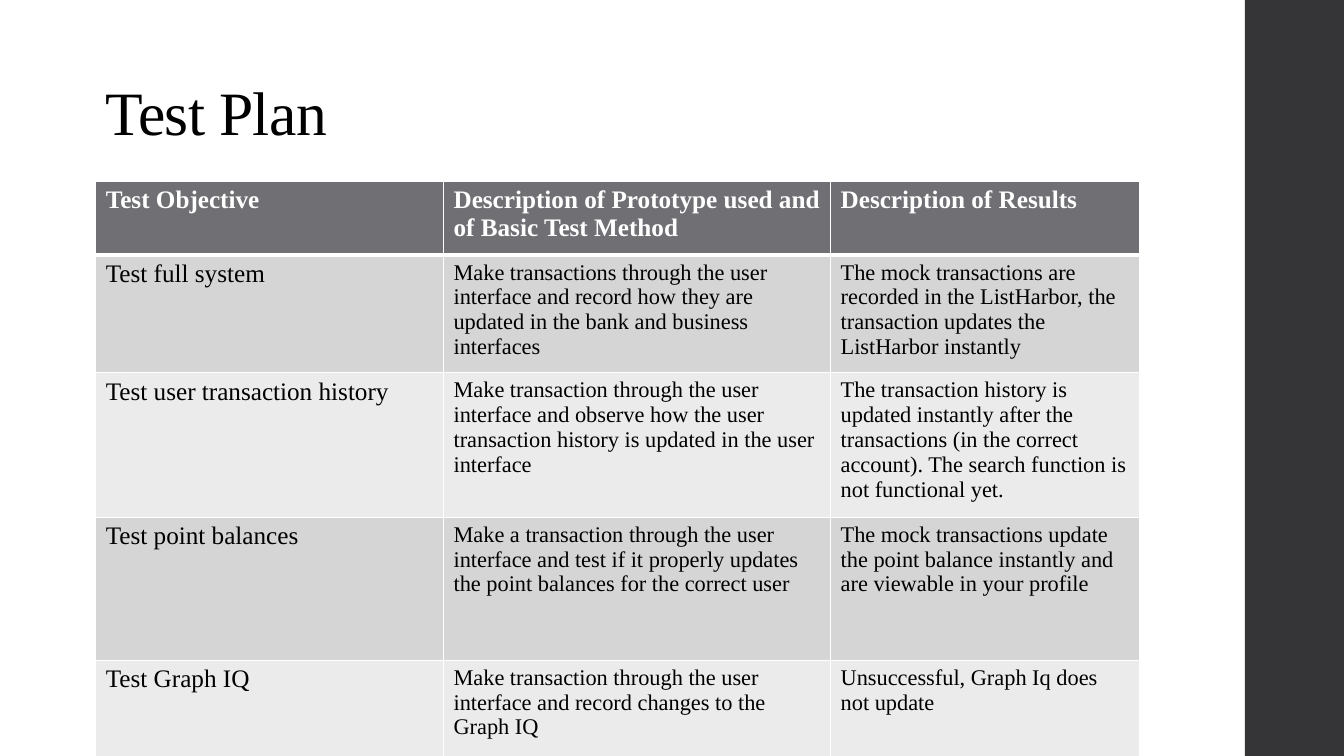
from lxml.etree import SubElement
from pptx import Presentation
from pptx.dml.color import RGBColor
from pptx.enum.shapes import MSO_SHAPE as Shape
from pptx.enum.text import MSO_ANCHOR as Anchor
from pptx.oxml.ns import qn
from pptx.util import Pt

FONT = "Times New Roman"
BLACK = RGBColor(0x00, 0x00, 0x00)
WHITE = RGBColor(0xFF, 0xFF, 0xFF)
SIDEBAR = RGBColor(0x35, 0x35, 0x37)
HEADER = RGBColor(0x6F, 0x6F, 0x74)
BANDS = [RGBColor(0xEB, 0xEB, 0xEB), RGBColor(0xD5, 0xD5, 0xD6)]

LEFT = 68.4
COLUMN_WIDTHS = [248.4, 276.5, 221]
ROW_HEIGHTS = [52.6, 82.8, 82.8, 102.2, 73.4]
TEST_PLAN = [
    ("Test Objective",
     "Description of Prototype used and of Basic Test Method",
     "Description of Results"),
    ("Test full system",
     "Make transactions through the user interface and record how they are "
     "updated in the bank and business interfaces",
     "The mock transactions are recorded in the ListHarbor, the transaction "
     "updates the ListHarbor instantly"),
    ("Test user transaction history",
     "Make transaction through the user interface and observe how the user "
     "transaction history is updated in the user interface",
     "The transaction history is updated instantly after the transactions "
     "(in the correct account). The search function is not functional yet."),
    ("Test point balances",
     "Make a transaction through the user interface and test if it properly "
     "updates the point balances for the correct user",
     "The mock transactions update the point balance instantly and are "
     "viewable in your profile"),
    ("Test Graph IQ",
     "Make transaction through the user interface and record changes to the "
     "Graph IQ",
     "Unsuccessful, Graph Iq does not update"),
]


def write(paragraph, text, color, **font_format):
    run = paragraph.add_run()
    run.text = text
    run.font.color.rgb = color
    for name, value in {"name": FONT, **font_format}.items():
        setattr(run.font, name, value)
    return run


def add_border(cell, side, width):
    """Draw a solid white line on one side: L, R, T or B."""
    line = SubElement(cell._tc.get_or_add_tcPr(), qn(f"a:ln{side}"),
                      w=str(Pt(width)))
    fill = SubElement(line, qn("a:solidFill"))
    SubElement(fill, qn("a:srgbClr"), val=str(WHITE))


prs = Presentation()
prs.slide_width, prs.slide_height = Pt(960), Pt(540)
slide = prs.slides.add_slide(prs.slide_layouts[6])

sidebar = slide.shapes.add_shape(Shape.RECTANGLE, Pt(889.2), 0, Pt(70.8), Pt(540))
sidebar.shadow.inherit = False
sidebar.fill.solid()
sidebar.fill.fore_color.rgb = SIDEBAR
sidebar.line.fill.background()

title = slide.shapes.add_textbox(Pt(LEFT), Pt(52.6), Pt(400.3), Pt(56.9)).text_frame
title.word_wrap = True
title.vertical_anchor = Anchor.BOTTOM
title.paragraphs[0].line_spacing = 0.9
title_run = write(title.paragraphs[0], "Test Plan", BLACK, size=Pt(44))
title_run.font._element.set("spc", "-50")

plan = slide.shapes.add_table(
    len(ROW_HEIGHTS), len(COLUMN_WIDTHS), Pt(LEFT), Pt(129.6),
    Pt(sum(COLUMN_WIDTHS)), Pt(sum(ROW_HEIGHTS))).table
for column, width in zip(plan.columns, COLUMN_WIDTHS):
    column.width = Pt(width)
for row, height in zip(plan.rows, ROW_HEIGHTS):
    row.height = Pt(height)

for r, entries in enumerate(TEST_PLAN):
    is_header = r == 0
    for c, text in enumerate(entries):
        cell = plan.cell(r, c)
        for side in "LRTB":
            thick = (is_header and side == "B") or (r == 1 and side == "T")
            add_border(cell, side, 3 if thick else 1)
        cell.fill.solid()
        cell.fill.fore_color.rgb = HEADER if is_header else BANDS[r % 2]
        write(cell.text_frame.paragraphs[0], text,
              WHITE if is_header else BLACK,
              size=Pt(18 if is_header or c == 0 else 16), bold=is_header)

prs.save("out.pptx")
